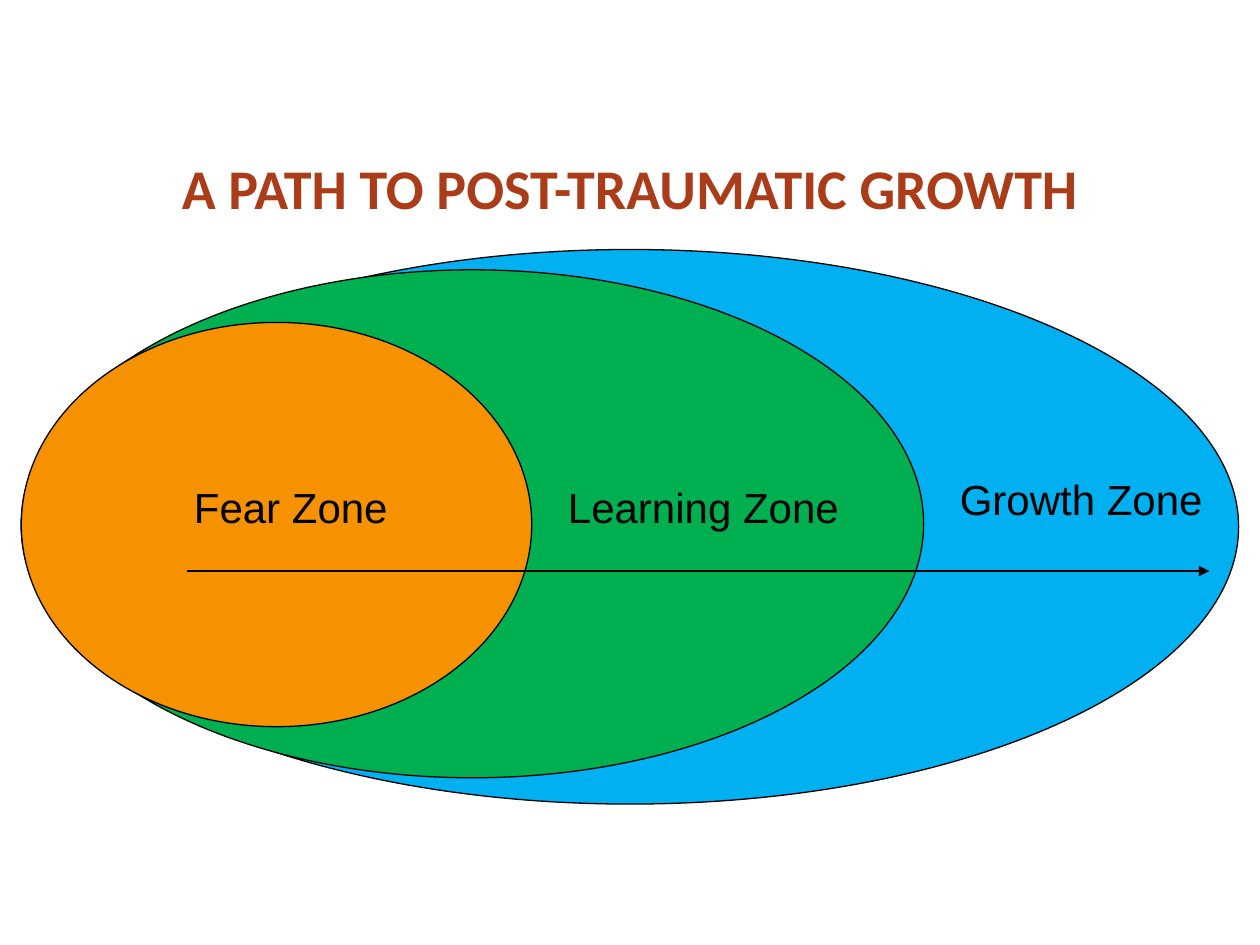
from dataclasses import dataclass

from lxml.etree import SubElement
from pptx import Presentation
from pptx.dml.color import RGBColor
from pptx.enum.shapes import MSO_CONNECTOR, MSO_SHAPE
from pptx.enum.text import MSO_ANCHOR, MSO_AUTO_SIZE, PP_ALIGN
from pptx.oxml.ns import qn
from pptx.util import Cm, Pt


@dataclass(frozen=True)
class Theme:
    heading: RGBColor = RGBColor(0xAB, 0x3C, 0x19)
    ink: RGBColor = RGBColor(0x00, 0x00, 0x00)
    growth: RGBColor = RGBColor(0x00, 0xB0, 0xF0)
    learning: RGBColor = RGBColor(0x00, 0xB0, 0x50)
    fear: RGBColor = RGBColor(0xF6, 0x92, 0x00)
    heading_font: str = "Calibri"
    label_font: str = "Arial"
    heading_size: int = Pt(32)
    label_size: int = Pt(24)
    outline: int = Pt(0.75)
    arrow: int = Pt(1.5)


THEME = Theme()
SLIDE_WIDTH, SLIDE_HEIGHT = 25.4, 19.05
ZONES_LEFT = 0.43
LABEL_WIDTH, LABEL_HEIGHT = 6.27, 2.39

# Largest zone first: top, width, height, fill
ZONES = [
    (5.03, 24.54, 11.18, THEME.growth),
    (5.44, 18.19, 10.24, THEME.learning),
    (6.5, 10.29, 8.15, THEME.fear),
]
LABELS = [
    ("Learning Zone", 11.2, 9.58),
    ("Growth Zone", 19.1, 9.42),
    ("Fear Zone", 3.66, 9.58),
]


def apply_format(target, values):
    for name, value in values.items():
        setattr(target, name, value)


def write_text(holder, text, align, font_values, color):
    frame = holder.text_frame
    apply_format(frame, {
        "word_wrap": True,
        "auto_size": MSO_AUTO_SIZE.NONE,
        "vertical_anchor": MSO_ANCHOR.TOP,
    })
    paragraph = frame.paragraphs[0]
    paragraph.alignment = align
    run = paragraph.add_run()
    run.text = text
    apply_format(run.font, font_values)
    run.font.color.rgb = color


def set_title(slide, text):
    title = slide.shapes.title
    apply_format(title, {
        "left": Cm(0), "top": Cm(2.97),
        "width": Cm(SLIDE_WIDTH), "height": Cm(2.06),
    })
    font_values = {"name": THEME.heading_font, "size": THEME.heading_size, "bold": True}
    write_text(title, text, PP_ALIGN.CENTER, font_values, THEME.heading)


def add_zone(slide, top, width, height, fill):
    zone = slide.shapes.add_shape(
        MSO_SHAPE.OVAL, Cm(ZONES_LEFT), Cm(top), Cm(width), Cm(height))
    zone.shadow.inherit = False
    zone.fill.solid()
    zone.fill.fore_color.rgb = fill
    zone.line.color.rgb = THEME.ink
    zone.line.width = THEME.outline


def add_label(slide, text, left, top):
    label = slide.shapes.add_textbox(
        Cm(left), Cm(top), Cm(LABEL_WIDTH), Cm(LABEL_HEIGHT))
    font_values = {"name": THEME.label_font, "size": THEME.label_size}
    write_text(label, text, PP_ALIGN.LEFT, font_values, THEME.ink)


def add_growth_arrow(slide, start, end, height):
    arrow = slide.shapes.add_connector(
        MSO_CONNECTOR.STRAIGHT, Cm(start), Cm(height), Cm(end), Cm(height))
    arrow.line.color.rgb = THEME.ink
    arrow.line.width = THEME.arrow
    properties = arrow.element.spPr
    SubElement(properties.find(qn("a:ln")), qn("a:tailEnd"), type="triangle")
    SubElement(properties, qn("a:effectLst"))


def main():
    deck = Presentation()
    deck.slide_width, deck.slide_height = Cm(SLIDE_WIDTH), Cm(SLIDE_HEIGHT)
    slide = deck.slides.add_slide(deck.slide_layouts.get_by_name("Title Only"))
    set_title(slide, "A PATH TO POST-TRAUMATIC GROWTH")
    for zone in ZONES:
        add_zone(slide, *zone)
    add_growth_arrow(slide, start=3.76, end=24.38, height=11.51)
    for label in LABELS:
        add_label(slide, *label)
    deck.save("out.pptx")


if __name__ == "__main__":
    main()
